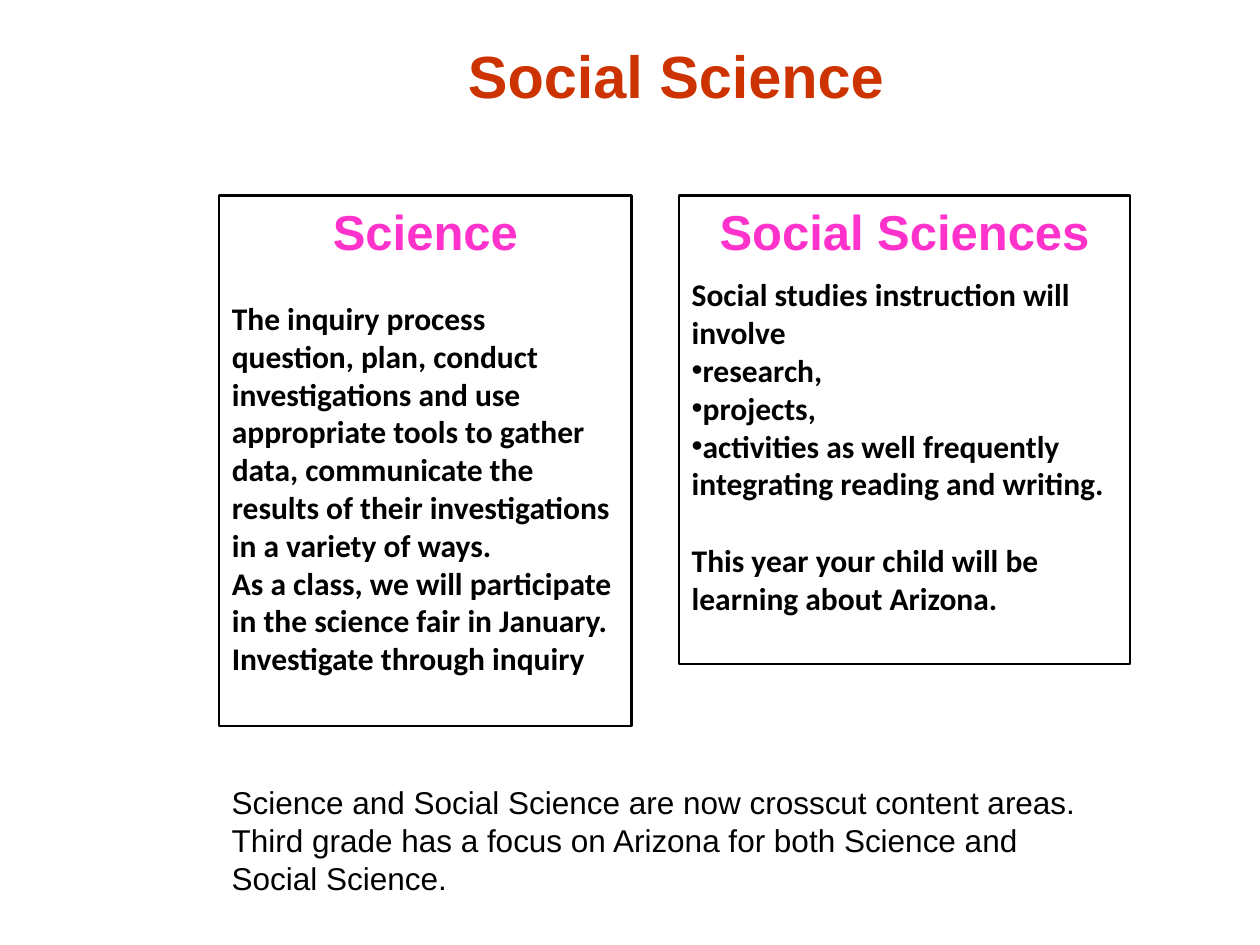
from lxml import etree
from pptx import Presentation
from pptx.dml.color import RGBColor
from pptx.enum.text import MSO_ANCHOR, MSO_AUTO_SIZE, PP_ALIGN
from pptx.oxml.ns import qn
from pptx.util import Cm, Pt

LEFT, CENTER = PP_ALIGN.LEFT, PP_ALIGN.CENTER
TOP, MIDDLE = MSO_ANCHOR.TOP, MSO_ANCHOR.MIDDLE
FIXED = MSO_AUTO_SIZE.NONE
RED, PINK, BLACK, WHITE = "CC3300", "FF33CC", "000000", "FFFFFF"

# Content: each card has a place, a gap under its heading (points) and
# lines of (text, bulleted, space before in points)
TITLE = "Social Science"
NOTE = ("Science and Social Science are now crosscut content areas. "
        "Third grade has a focus on Arizona for both Science and Social Science.")
CARDS = [
    {"head": "Science", "at": (4.42, 3.94, 8.31, 10.69), "gap": 22, "lines": [
        ("The inquiry process", False, 0),
        ("question, plan, conduct investigations and use appropriate tools to "
         "gather data, communicate the results of their investigations in a "
         "variety of ways.", False, 0),
        ("As a class, we will participate in the science fair in January.",
         False, 0),
        ("Investigate through inquiry", False, 0)]},
    {"head": "Social Sciences", "at": (13.69, 3.94, 9.09, 9.45), "gap": 8.5,
     "lines": [
        ("Social studies instruction will involve", False, 0),
        ("research,", True, 0),
        ("projects,", True, 0),
        ("activities as well frequently integrating reading and writing.",
         True, 0),
        ("This year your child will be learning about Arizona.", False, 22)]},
]


def color(code):
    return RGBColor.from_string(code)


def place(shape, at, anchor=TOP):
    """Move a shape and set up its text frame."""
    shape.left, shape.top, shape.width, shape.height = map(Cm, at)
    frame = shape.text_frame
    frame.word_wrap = True
    frame.auto_size = FIXED
    frame.vertical_anchor = anchor
    return frame


def write(para, text, size, font, code, bold=True, align=LEFT, before=0):
    para.text = text
    para.alignment = align
    para.space_before = Pt(before)
    para.font.size = Pt(size)
    para.font.name = font
    para.font.bold = bold
    para.font.color.rgb = color(code)


def mark(para, bullet):
    """Remove the indent and set or clear the bullet."""
    props = para._p.get_or_add_pPr()
    props.set("marL", "0")
    props.set("indent", "0")
    tag = etree.Element(qn("a:buChar" if bullet else "a:buNone"))
    if bullet:
        tag.set("char", "•")
    # Bullets come before the default run properties
    props.find(qn("a:defRPr")).addprevious(tag)


prs = Presentation()
prs.slide_width, prs.slide_height = Cm(25.4), Cm(19.05)
slide = prs.slides.add_slide(prs.slide_layouts[3])
title, *bodies = slide.placeholders

# Title
frame = place(title, (2.1, 0.65, 23.06, 1.7), MIDDLE)
write(frame.paragraphs[0], TITLE, 34, "Arial", RED, align=CENTER)

# Cards
for body, card in zip(bodies, CARDS):
    frame = place(body, card["at"])
    body.fill.solid()
    body.fill.fore_color.rgb = color(WHITE)
    body.line.color.rgb = color(BLACK)
    body.line.width = Pt(1.25)
    head = frame.paragraphs[0]
    write(head, card["head"], 28, "Arial", PINK, align=CENTER)
    head.space_after = Pt(card["gap"])
    mark(head, False)
    for text, bullet, before in card["lines"]:
        para = frame.add_paragraph()
        write(para, text, 18, "Calibri", BLACK, before=before)
        mark(para, bullet)

# Closing note
box = slide.shapes.add_textbox(0, 0, 0, 0)
frame = place(box, (4.42, 15.67, 18.21, 2.5))
write(frame.paragraphs[0], NOTE, 18, "Arial", BLACK, bold=False)

prs.save("out.pptx")
